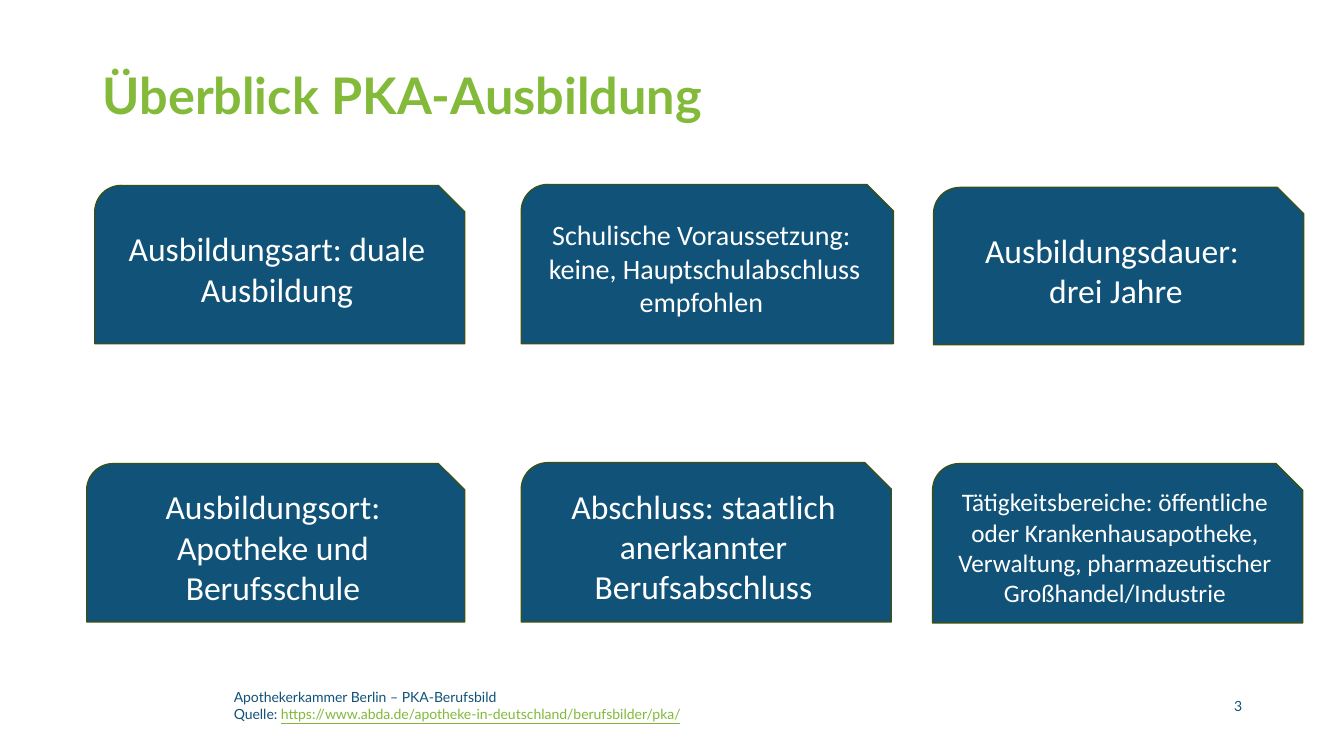
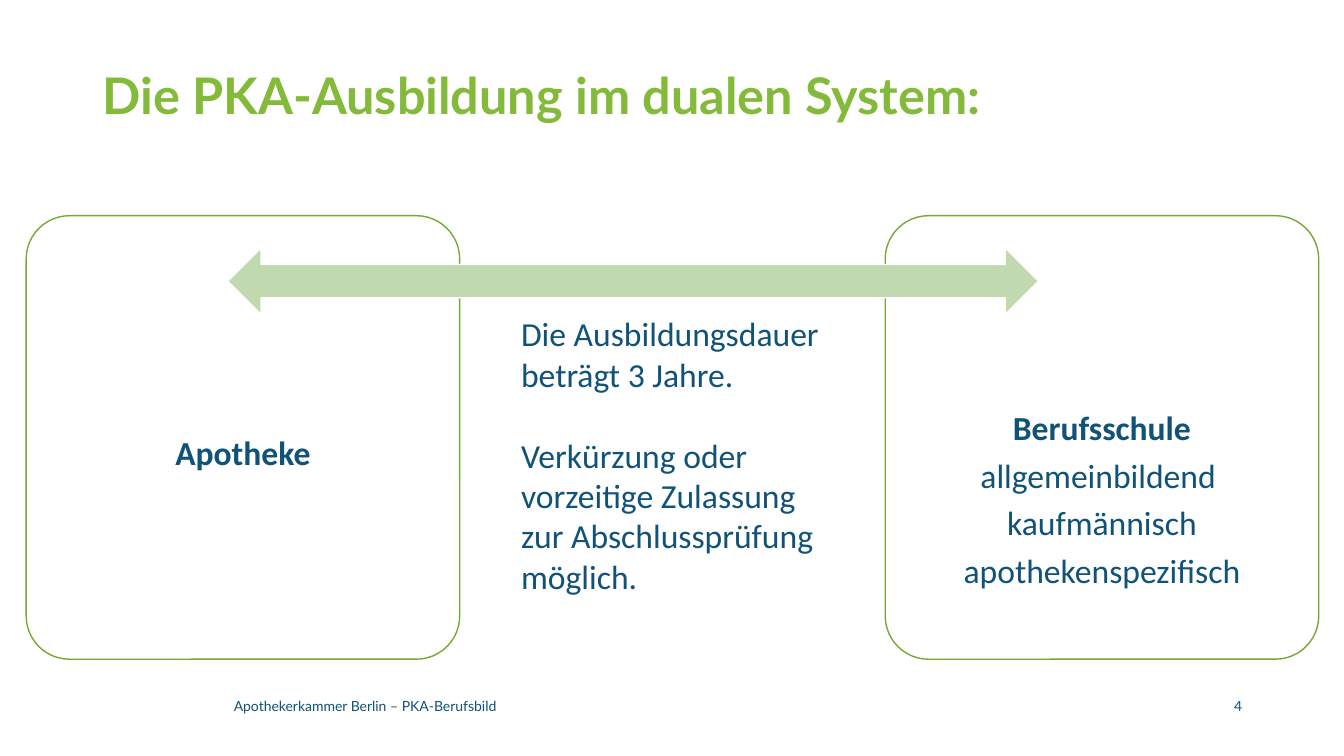
from dataclasses import dataclass
from typing import NamedTuple

from pptx import Presentation
from pptx.dml.color import RGBColor
from pptx.enum.shapes import MSO_SHAPE as Preset
from pptx.enum.text import MSO_ANCHOR as Anchor, PP_ALIGN as Align
from pptx.util import Pt

# Scale: 100 px to the inch
EMU_PER_PX = 9144

BLUE = RGBColor(0x10, 0x52, 0x78)
GREEN = RGBColor(0x83, 0xBA, 0x3A)
LINK_GREEN = RGBColor(0x83, 0xB9, 0x3A)
CARD_EDGE = RGBColor(0x39, 0x51, 0x19)
PANEL_EDGE = RGBColor(0x77, 0xA8, 0x35)
ARROW_GREEN = RGBColor(0xC1, 0xD9, 0xAF)
WHITE = RGBColor(0xFF, 0xFF, 0xFF)

FOOTER_TEXT = "Apothekerkammer Berlin – PKA-Berufsbild"
SOURCE_URL = "https://www.abda.de/apotheke-in-deutschland/berufsbilder/pka/"

TITLE_FONT = {"name": "Lato", "size": Pt(36), "bold": True}
FOOTER_FONT = {"name": "Lato", "size": Pt(10)}
LINK_FONT = {**FOOTER_FONT, "underline": True}
BODY_FONT = {"name": "Calibri", "size": Pt(24)}
HEADING_FONT = {**BODY_FONT, "bold": True}

CENTERED = {"alignment": Align.CENTER}
PANEL_FORMAT = {**CENTERED, "line_spacing": 0.9, "space_after": Pt(8)}


class Box(NamedTuple):
    left: int
    top: int
    width: int
    height: int


class Piece(NamedTuple):
    text: str
    font: dict
    color: RGBColor = BLUE


@dataclass(frozen=True)
class Card:
    box: Box
    text: str
    size: int = 24


@dataclass(frozen=True)
class Panel:
    box: Box
    top_inset: int
    heading: str
    lines: tuple[str, ...] = ()


TITLE_BOX = Box(92, 40, 1150, 114)
FOOTER_BOX = Box(222, 680, 871, 40)
NUMBER_BOX = Box(1098, 680, 144, 40)
ARROW_BOX = Box(226, 246, 804, 66)
DURATION_BOX = Box(507, 306, 327, 293)

CARDS = (
    Card(Box(94, 184, 367, 157), "Ausbildungsart: duale Ausbildung"),
    Card(Box(517, 183, 369, 158),
         "Schulische Voraussetzung: \nkeine, Hauptschulabschluss empfohlen ", 20),
    Card(Box(926, 186, 367, 156), "Ausbildungsdauer: \ndrei Jahre"),
    Card(Box(86, 460, 375, 157), "Ausbildungsort: Apotheke und Berufsschule"),
    Card(Box(517, 459, 367, 158), "Abschluss: staatlich anerkannter Berufsabschluss"),
    Card(Box(925, 460, 367, 158),
         "Tätigkeitsbereiche: öffentliche oder Krankenhausapotheke, "
         "Verwaltung, pharmazeutischer Großhandel/Industrie", 18),
)

PANELS = (
    Panel(Box(26, 214, 430, 440), 206, "Apotheke"),
    Panel(Box(878, 214, 430, 440), 182, "Berufsschule",
          ("allgemeinbildend ", "kaufmännisch", "apothekenspezifisch")),
)


def px(length: int) -> int:
    return length * EMU_PER_PX


def apply_format(target, values: dict) -> None:
    for name, value in values.items():
        setattr(target, name, value)


def write(shape, paragraphs: list[list[Piece]], anchor: Anchor, layout: dict) -> None:
    """Fill a shape with paragraphs; a newline in a piece is a line break."""
    frame = shape.text_frame
    apply_format(frame, {"word_wrap": True, "vertical_anchor": anchor})
    for index, pieces in enumerate(paragraphs):
        paragraph = frame.add_paragraph() if index else frame.paragraphs[0]
        apply_format(paragraph, layout)
        for piece in pieces:
            for line_index, line in enumerate(piece.text.split("\n")):
                if line_index:
                    paragraph.add_line_break()
                run = paragraph.add_run()
                run.text = line
                apply_format(run.font, piece.font)
                run.font.color.rgb = piece.color


def add_text(slide, box: Box, paragraphs: list[list[Piece]],
             anchor: Anchor = Anchor.MIDDLE, **layout):
    shape = slide.shapes.add_textbox(*map(px, box))
    write(shape, paragraphs, anchor, layout)
    return shape


def add_preset(slide, preset: Preset, box: Box, fill: RGBColor, edge: RGBColor):
    shape = slide.shapes.add_shape(preset, *map(px, box))
    shape.shadow.inherit = False
    shape.fill.solid()
    shape.fill.fore_color.rgb = fill
    shape.line.color.rgb = edge
    shape.line.width = Pt(1)
    return shape


def add_card(slide, card: Card) -> None:
    shape = add_preset(slide, Preset.SNIP_ROUND_RECTANGLE, card.box, BLUE, CARD_EDGE)
    font = {**BODY_FONT, "size": Pt(card.size)}
    write(shape, [[Piece(card.text, font, WHITE)]], Anchor.MIDDLE, CENTERED)


def add_panel(slide, panel: Panel) -> None:
    shape = add_preset(slide, Preset.ROUNDED_RECTANGLE, panel.box, WHITE, PANEL_EDGE)
    shape.adjustments[0] = 0.1
    apply_format(shape.text_frame, {
        "margin_left": px(6), "margin_right": px(6),
        "margin_top": px(panel.top_inset), "margin_bottom": px(40),
    })
    paragraphs = [[Piece(panel.heading, HEADING_FONT)]]
    paragraphs += [[Piece(line, BODY_FONT)] for line in panel.lines]
    write(shape, paragraphs, Anchor.TOP, PANEL_FORMAT)


def start_slide(presentation, title: str, number: int, source: str = ""):
    """Add a blank slide with the shared title, footer and number."""
    slide = presentation.slides.add_slide(presentation.slide_layouts[6])
    add_text(slide, TITLE_BOX, [[Piece(title, TITLE_FONT, GREEN)]], line_spacing=0.9)
    footer = [[Piece(FOOTER_TEXT, FOOTER_FONT)]]
    if source:
        footer.append([Piece("Quelle: ", FOOTER_FONT),
                       Piece(source, LINK_FONT, LINK_GREEN)])
    add_text(slide, FOOTER_BOX, footer)
    add_text(slide, NUMBER_BOX, [[Piece(str(number), FOOTER_FONT)]],
             alignment=Align.RIGHT)
    return slide


def build_overview(presentation) -> None:
    slide = start_slide(presentation, "Überblick PKA-Ausbildung", 3, SOURCE_URL)
    for card in CARDS:
        add_card(slide, card)


def build_dual_system(presentation) -> None:
    slide = start_slide(presentation, "Die PKA-Ausbildung im dualen System:", 4)
    for panel in PANELS:
        add_panel(slide, panel)
    add_preset(slide, Preset.LEFT_RIGHT_ARROW, ARROW_BOX, ARROW_GREEN, WHITE)

    # Training period between the panels
    duration = add_text(slide, DURATION_BOX, [
        [Piece("Die Ausbildungsdauer beträgt 3 Jahre.", BODY_FONT)],
        [Piece("Verkürzung oder vorzeitige Zulassung zur Abschlussprüfung möglich.",
               BODY_FONT)],
    ], Anchor.TOP)
    duration.text_frame.paragraphs[1].space_before = Pt(29)


def main() -> None:
    presentation = Presentation()
    apply_format(presentation, {"slide_width": px(1333), "slide_height": px(750)})
    build_overview(presentation)
    build_dual_system(presentation)
    presentation.save("out.pptx")


if __name__ == "__main__":
    main()
